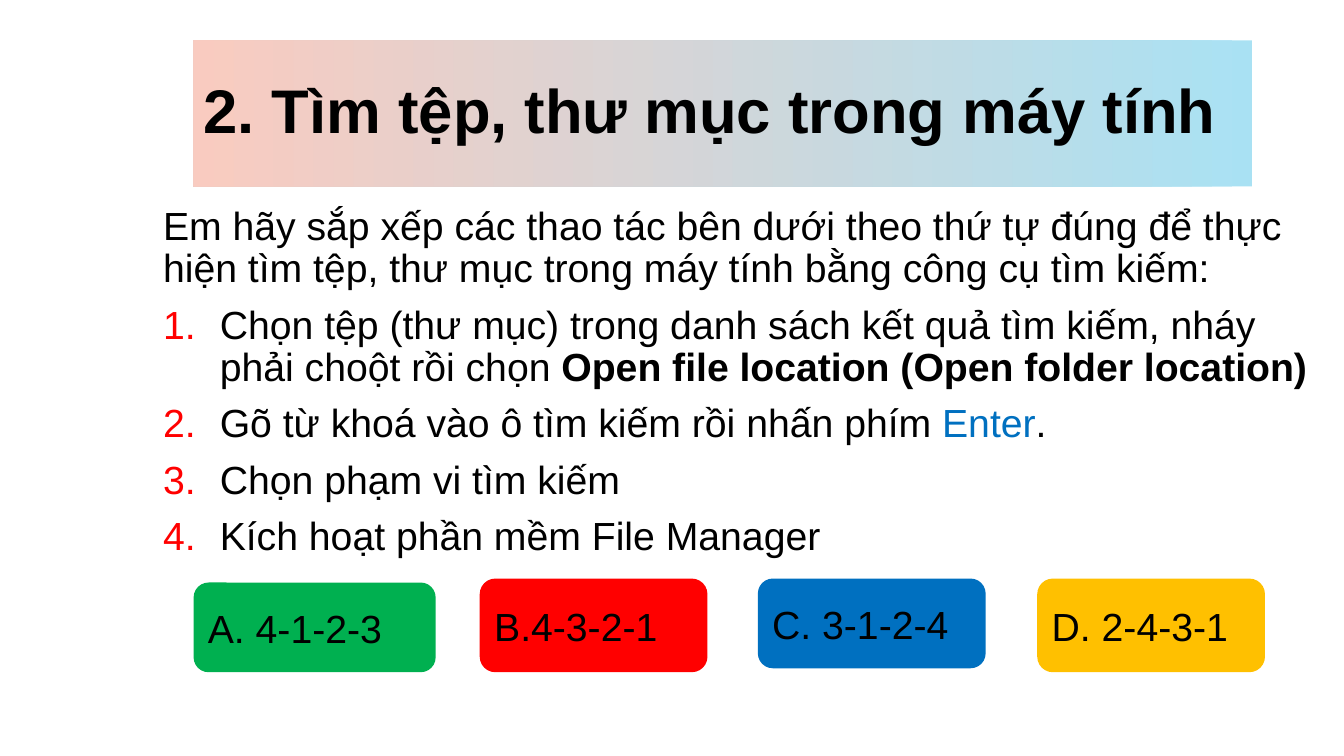
from lxml import etree
from pptx import Presentation
from pptx.dml.color import RGBColor
from pptx.enum.shapes import MSO_SHAPE
from pptx.enum.text import MSO_ANCHOR, PP_ALIGN
from pptx.oxml.ns import qn
from pptx.util import Cm, Pt

RECTANGLE = MSO_SHAPE.RECTANGLE
ROUNDED = MSO_SHAPE.ROUNDED_RECTANGLE
MIDDLE = MSO_ANCHOR.MIDDLE
LEFT = PP_ALIGN.LEFT

FONT = "Arial"
BLACK, RED, BLUE = "000000", "FF0000", "0070C0"


def color(hex_code):
    return RGBColor.from_string(hex_code)


def style(span, size, hex_code=BLACK, bold=False):
    span.font.name = FONT
    span.font.size = Pt(size)
    span.font.bold = bold
    span.font.color.rgb = color(hex_code)


deck = Presentation()
deck.slide_width, deck.slide_height = Cm(33.87), Cm(19.05)
page = deck.slides.add_slide(deck.slide_layouts[6])

# Title banner with a translucent gradient
banner = page.shapes.add_shape(RECTANGLE, Cm(4.88), Cm(1.02), Cm(26.67), Cm(3.68))
banner.shadow.inherit = False
banner.line.fill.background()
banner.fill.gradient()
banner.fill.gradient_angle = 180
for stop, hex_code in zip(banner.fill.gradient_stops, ("8DD8F0", "F8BAAB")):
    stop.color.rgb = color(hex_code)
for stop_color in banner.element.spPr.iter(qn("a:srgbClr")):
    etree.SubElement(stop_color, qn("a:alpha"), val="75000")
frame = banner.text_frame
frame.word_wrap = True
frame.vertical_anchor = MIDDLE
frame.text = "2. Tìm tệp, thư mục trong máy tính"
frame.paragraphs[0].alignment = LEFT
frame.paragraphs[0].line_spacing = 0.9
style(frame.paragraphs[0].runs[0], 44, bold=True)

# Question and numbered steps: each paragraph lists (text, colour, bold)
question = [
    [("Em hãy sắp xếp các thao tác bên dưới theo thứ tự đúng để thực hiện "
      "tìm tệp, thư mục trong máy tính bằng công cụ tìm kiếm:", BLACK, False)],
    [("Chọn tệp (thư mục) trong danh sách kết quả tìm kiếm, nháy phải choột "
      "rồi chọn ", BLACK, False),
     ("Open file location (Open folder location)", BLACK, True)],
    [("Gõ từ khoá vào ô tìm kiếm rồi nhấn phím ", BLACK, False),
     ("Enter", BLUE, False), (".", BLACK, False)],
    [("Chọn phạm vi tìm kiếm", BLACK, False)],
    [("Kích hoạt phần mềm File Manager", BLACK, False)],
]
box = page.shapes.add_textbox(Cm(3.86), Cm(5.08), Cm(30.01), Cm(7.52))
frame = box.text_frame
frame.word_wrap = True
for index, spans in enumerate(question):
    para = frame.add_paragraph() if index else frame.paragraphs[0]
    para.line_spacing = 0.9
    if index:
        para.space_before = Pt(10)
        properties = para._p.get_or_add_pPr()
        properties.set("marL", str(Cm(1.43)))
        properties.set("indent", str(-Cm(1.43)))
        bullet_color = etree.SubElement(properties, qn("a:buClr"))
        etree.SubElement(bullet_color, qn("a:srgbClr"), val=RED)
        etree.SubElement(properties, qn("a:buFont"), typeface="+mj-lt")
        etree.SubElement(properties, qn("a:buAutoNum"), type="arabicPeriod")
    for text, hex_code, bold in spans:
        span = para.add_run()
        span.text = text
        style(span, 28, hex_code, bold)

# Answer buttons: text, fill, left, top, width, height
answers = [
    ("A. 4-1-2-3", "00B050", 4.88, 14.68, 6.1, 2.26),
    ("B.4-3-2-1", RED, 12.09, 14.58, 5.74, 2.36),
    ("C. 3-1-2-4", BLUE, 19.1, 14.58, 5.74, 2.26),
    ("D. 2-4-3-1", "FFC000", 26.14, 14.58, 5.74, 2.36),
]
for text, hex_code, *place in answers:
    button = page.shapes.add_shape(ROUNDED, *map(Cm, place))
    button.shadow.inherit = False
    button.fill.solid()
    button.fill.fore_color.rgb = color(hex_code)
    button.line.fill.background()
    frame = button.text_frame
    frame.word_wrap = True
    frame.vertical_anchor = MIDDLE
    frame.text = text
    frame.paragraphs[0].alignment = LEFT
    style(frame.paragraphs[0].runs[0], 28)

deck.save("out.pptx")
